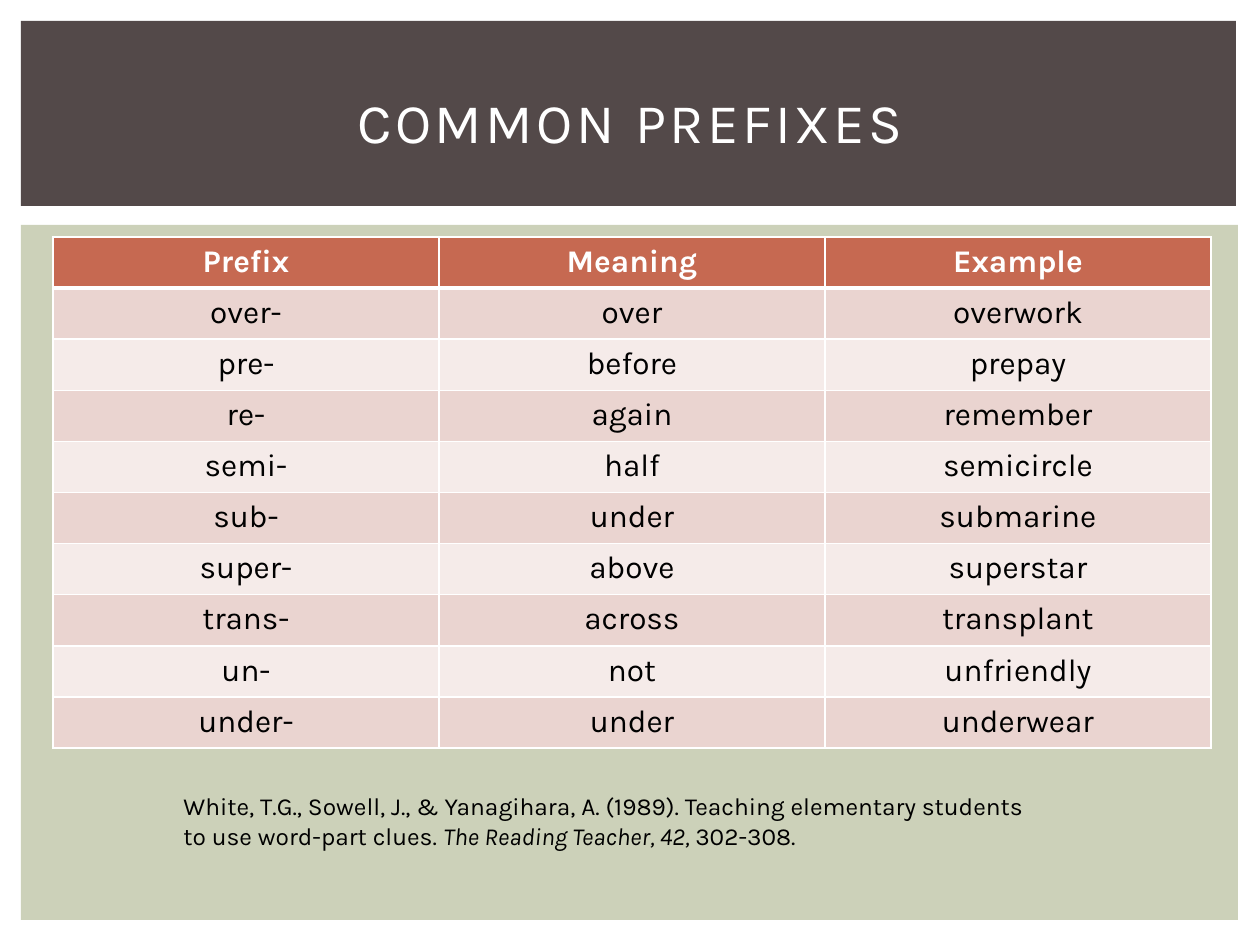
"""Build the Common Prefixes slide."""
from dataclasses import dataclass

from lxml.etree import SubElement
from pptx import Presentation
from pptx.dml.color import RGBColor
from pptx.enum.shapes import MSO_SHAPE
from pptx.enum.text import MSO_ANCHOR, MSO_AUTO_SIZE, PP_ALIGN
from pptx.oxml.ns import qn
from pptx.util import Emu, Pt

PX = 914400 / 126
FONT = "Karla"
COLORS = {
    "green": "CCD1B9",
    "brown": "534949",
    "rust": "C66951",
    "rose": "EAD4D0",
    "blush": "F5EBE9",
    "white": "FFFFFF",
    "black": "000000",
}
ROWS = [
    ("Prefix", "Meaning", "Example"),
    ("over-", "over", "overwork"),
    ("pre-", "before", "prepay"),
    ("re-", "again", "remember"),
    ("semi-", "half", "semicircle"),
    ("sub-", "under", "submarine"),
    ("super-", "above", "superstar"),
    ("trans-", "across", "transplant"),
    ("un-", "not", "unfriendly"),
    ("under-", "under", "underwear"),
]
CITATION = [
    ("White, T.G., Sowell, J., & Yanagihara, A. (1989). "
     "Teaching elementary students to use word-part clues. ", False),
    ("The Reading Teacher, 42, ", True),
    ("302-308.", False),
]


@dataclass(frozen=True)
class Box:
    left: int
    top: int
    width: int
    height: int

    def emu(self) -> tuple:
        return tuple(px(n) for n in (self.left, self.top, self.width, self.height))


@dataclass(frozen=True)
class Panel:
    box: Box
    color: str


PANELS = [
    Panel(Box(21, 225, 1217, 695), "green"),
    Panel(Box(21, 21, 1215, 185), "brown"),
]
TABLE = Box(53, 237, 1158, 511)
TITLE = Box(53, 49, 1155, 145)
SOURCE = Box(171, 785, 879, 72)


def px(n: float) -> Emu:
    return Emu(round(n * PX))


def rgb(name: str) -> RGBColor:
    return RGBColor.from_string(COLORS[name])


def add_run(p, text: str, size: int, color: str, bold=False, italic=False):
    r = p.add_run()
    r.text = text
    r.font.name = FONT
    r.font.size = Pt(size)
    r.font.bold = bold
    r.font.italic = italic
    r.font.color.rgb = rgb(color)
    return r


def add_panel(s, panel: Panel) -> None:
    sp = s.shapes.add_shape(MSO_SHAPE.RECTANGLE, *panel.box.emu())
    sp.shadow.inherit = False
    sp.fill.solid()
    sp.fill.fore_color.rgb = rgb(panel.color)
    sp.line.fill.background()


def add_border(cell, side: str, width: int) -> None:
    ln = SubElement(cell._tc.get_or_add_tcPr(), qn(f"a:{side}"), w=str(Pt(width)))
    fill = SubElement(ln, qn("a:solidFill"))
    SubElement(fill, qn("a:srgbClr"), val=COLORS["white"])


def format_cell(cell, text: str, row: int) -> None:
    header = row == 0
    for side in ("lnL", "lnR", "lnT", "lnB"):
        thick = (header and side == "lnB") or (row == 1 and side == "lnT")
        add_border(cell, side, 3 if thick else 1)
    cell.fill.solid()
    cell.fill.fore_color.rgb = rgb("rust" if header else "rose" if row % 2 else "blush")
    p = cell.text_frame.paragraphs[0]
    p.alignment = PP_ALIGN.CENTER
    add_run(p, text, 18, "white" if header else "black", bold=header)


def add_prefix_table(s) -> None:
    table = s.shapes.add_table(len(ROWS), len(ROWS[0]), *TABLE.emu()).table
    for col in table.columns:
        col.width = px(TABLE.width / len(ROWS[0]))
    for i, words in enumerate(ROWS):
        table.rows[i].height = px(TABLE.height / len(ROWS))
        for j, word in enumerate(words):
            format_cell(table.cell(i, j), word, i)


def format_title(s) -> None:
    sp = s.shapes.title
    sp.left, sp.top, sp.width, sp.height = TITLE.emu()
    s.shapes.element.append(sp.element)
    tf = sp.text_frame
    tf.word_wrap = True
    tf.auto_size = MSO_AUTO_SIZE.NONE
    tf.vertical_anchor = MSO_ANCHOR.MIDDLE
    p = tf.paragraphs[0]
    p.alignment = PP_ALIGN.CENTER
    r = add_run(p, "COMMON PREFIXES", 32, "white")
    r.font._element.set("spc", "200")


def add_citation(s) -> None:
    tf = s.shapes.add_textbox(*SOURCE.emu()).text_frame
    tf.word_wrap = True
    tf.auto_size = MSO_AUTO_SIZE.SHAPE_TO_FIT_TEXT
    for text, italic in CITATION:
        add_run(tf.paragraphs[0], text, 14, "black", italic=italic)


def main() -> None:
    prs = Presentation()
    prs.slide_width, prs.slide_height = px(1260), px(945)
    s = prs.slides.add_slide(prs.slide_layouts[5])
    for panel in PANELS:
        add_panel(s, panel)
    add_prefix_table(s)
    format_title(s)
    add_citation(s)
    prs.save("out.pptx")


if __name__ == "__main__":
    main()
